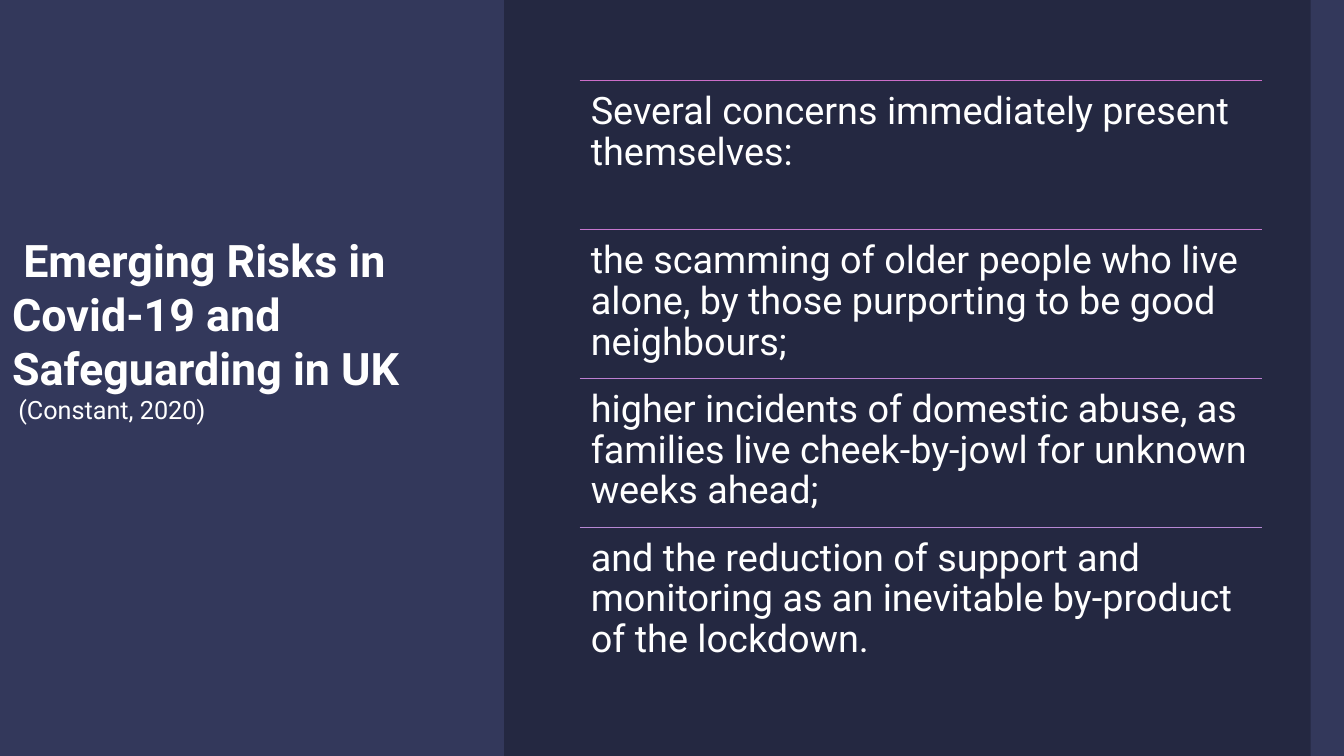
from lxml.etree import SubElement
from pptx import Presentation
from pptx.dml.color import RGBColor
from pptx.enum.shapes import MSO_CONNECTOR as Connector, MSO_SHAPE as Preset
from pptx.enum.text import MSO_ANCHOR as Anchor, MSO_AUTO_SIZE as AutoSize, PP_ALIGN as Align
from pptx.oxml.ns import qn
from pptx.util import Inches, Pt

WIDTH, HEIGHT = 13.33, 7.5
NAVY = RGBColor(0x24, 0x28, 0x41)
INDIGO = RGBColor(0x33, 0x38, 0x5B)
WHITE = RGBColor(0xFF, 0xFF, 0xFF)
FONT = "Roboto"

LIST_LEFT, LIST_TOP, LIST_WIDTH, ROW_HEIGHT = 5.75, 0.8, 6.77, 1.477
CONCERNS = [
    ("Several concerns immediately present themselves:", RGBColor(0xCB, 0x6E, 0xC8)),
    ("the scamming of older people who live alone, by those purporting to be good neighbours;",
     RGBColor(0xC5, 0x77, 0xCE)),
    ("higher incidents of domestic abuse, as families live cheek-by-jowl for unknown weeks ahead;",
     RGBColor(0xBD, 0x7F, 0xD1)),
    ("and the reduction of support and monitoring as an inevitable by-product of the lockdown.",
     RGBColor(0xB7, 0x88, 0xD4)),
]
WAVY_EDGE = [(4.84, 7.5), (4.84, 7.29), (4.79, 4.17), (4.84, 2.81), (4.84, 1.64),
             (4.84, 1.18), (4.83, 0.96), (4.79, 0.6), (4.82, 0.11), (4.82, 0)]


def paint(shape, color):
    shape.shadow.inherit = False
    shape.fill.solid()
    shape.fill.fore_color.rgb = color
    shape.line.fill.background()


def write(para, text, size, bold=False, spacing=1.0):
    para.alignment = Align.LEFT
    para.line_spacing = spacing
    span = para.add_run()
    span.text = text
    span.font.name = FONT
    span.font.size = Pt(size)
    span.font.bold = bold
    span.font.color.rgb = WHITE


def prepare_frame(box, inset):
    frame = box.text_frame
    frame.word_wrap = True
    frame.auto_size = AutoSize.NONE
    frame.vertical_anchor = Anchor.TOP
    frame.margin_left = frame.margin_right = Inches(inset)
    frame.margin_top = frame.margin_bottom = Inches(inset)
    return frame


def add_panels(page):
    left_panel = page.shapes.add_shape(Preset.RECTANGLE, 0, 0, Inches(WIDTH), Inches(HEIGHT))
    paint(left_panel, INDIGO)
    outline = page.shapes.build_freeform(WIDTH, 0, scale=Inches(1))
    outline.add_line_segments([(WIDTH, HEIGHT)] + WAVY_EDGE)
    right_panel = outline.convert_to_shape()
    paint(right_panel, NAVY)
    for panel in (left_panel, right_panel):
        page.shapes.title.element.addprevious(panel.element)


def fill_title(page):
    title = page.shapes.title
    title.left, title.top = Inches(0.12), Inches(2.31)
    title.width, title.height = Inches(4.67), Inches(2.1)
    frame = prepare_frame(title, 0)
    write(frame.paragraphs[0], " Emerging Risks in Covid-19 and Safeguarding in UK", 32, bold=True)
    write(frame.add_paragraph(), " (Constant, 2020)", 18)


def add_rule(page, top, color):
    rule = page.shapes.add_connector(Connector.STRAIGHT, Inches(LIST_LEFT), Inches(top),
                                     Inches(LIST_LEFT + LIST_WIDTH), Inches(top))
    rule.line.color.rgb = color
    rule.line.width = Pt(0.5)
    SubElement(rule.element.spPr, qn("a:effectLst"))


def add_concern(page, row, text, color):
    top = LIST_TOP + row * ROW_HEIGHT
    add_rule(page, top, color)
    box = page.shapes.add_textbox(Inches(LIST_LEFT), Inches(top),
                                  Inches(LIST_WIDTH), Inches(ROW_HEIGHT))
    frame = prepare_frame(box, 0.11)
    write(frame.paragraphs[0], text, 27, spacing=0.9)


def main():
    deck = Presentation()
    deck.slide_width, deck.slide_height = Inches(WIDTH), Inches(HEIGHT)
    page = deck.slides.add_slide(deck.slide_layouts.get_by_name("Title Only"))
    page.background.fill.solid()
    page.background.fill.fore_color.rgb = NAVY
    add_panels(page)
    fill_title(page)
    for row, (text, color) in enumerate(CONCERNS):
        add_concern(page, row, text, color)
    deck.save("out.pptx")


if __name__ == "__main__":
    main()
